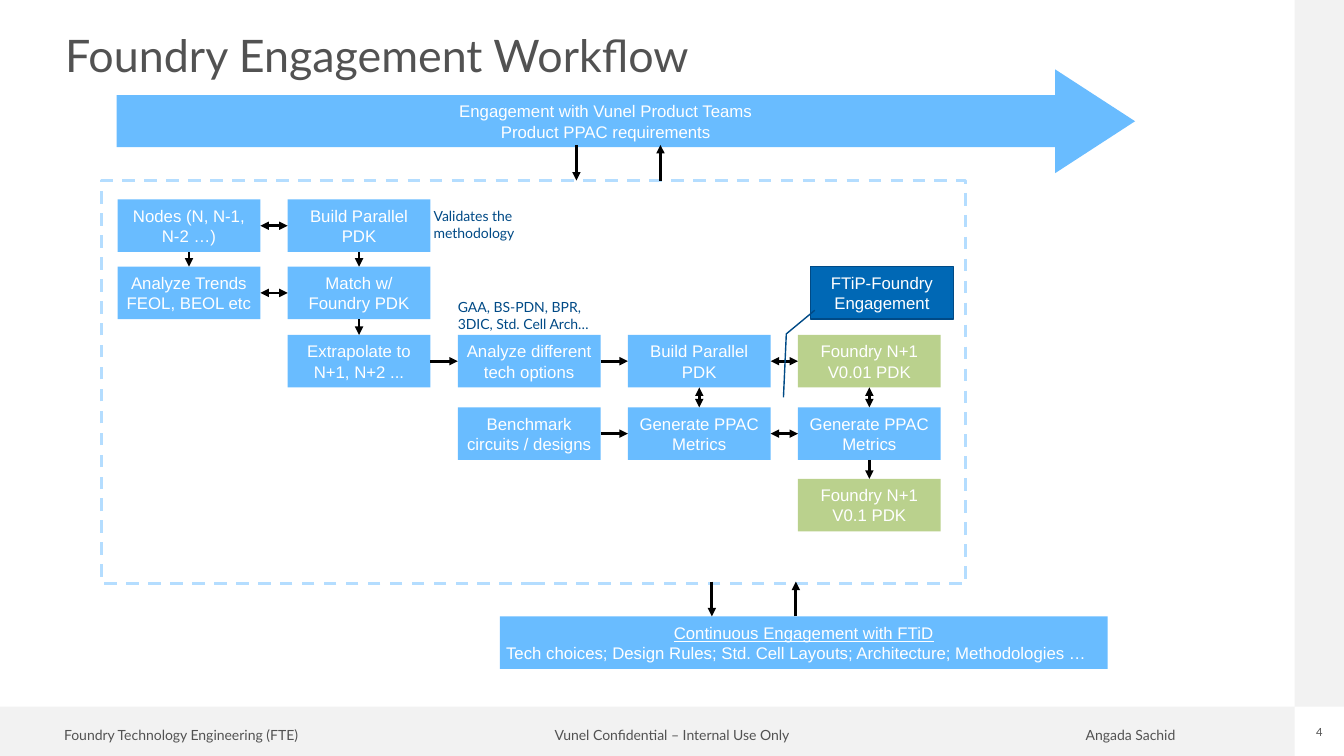
import pptx
import pptx.util
import pptx.dml.color
import pptx.enum.dml
import pptx.enum.shapes
import pptx.enum.text
import pptx.oxml
import pptx.oxml.ns

SCALE = 9525
SHAPE = pptx.enum.shapes.MSO_SHAPE
ALIGN = pptx.enum.text.PP_ALIGN
ANCHOR = pptx.enum.text.MSO_ANCHOR
BLUE, GREEN, GRAY, NAVY, TEXT = "69BCFF", "BAD18D", "F2F2F2", "004A86", "525252"

deck = pptx.Presentation()
deck.slide_width, deck.slide_height = 1280 * SCALE, 720 * SCALE
slide = deck.slides.add_slide(deck.slide_layouts[6])
shapes = slide.shapes


def color(code):
    return pptx.dml.color.RGBColor.from_string(code)


def write(text, at=None, shape=None, kind=None, fill=None, size=12, font="Arial",
          ink="FFFFFF", align=ALIGN.CENTER, anchor=ANCHOR.MIDDLE, inset=(6, 6), lead=None):
    place = [n * SCALE for n in at]
    if kind is None:
        shape = shapes.add_textbox(*place)
    else:
        shape = shapes.add_shape(kind, *place)
        shape.shadow.inherit = False
        shape.line.fill.background()
        if fill:
            shape.fill.solid()
            shape.fill.fore_color.rgb = color(fill)
        else:
            shape.fill.background()
    frame = shape.text_frame
    frame.word_wrap = True
    frame.vertical_anchor = anchor
    frame.margin_left = frame.margin_right = inset[0] * SCALE
    frame.margin_top = frame.margin_bottom = inset[1] * SCALE
    frame.text = text
    for para in frame.paragraphs:
        para.alignment = align
        if lead:
            para.line_spacing = lead
        for run in para.runs:
            run.font.size = pptx.util.Pt(size)
            run.font.name = font
            run.font.color.rgb = color(ink)
    return shape


def arrow(start, end, both=False):
    link = shapes.add_connector(pptx.enum.shapes.MSO_CONNECTOR.STRAIGHT,
                                *[n * SCALE for n in start + end])
    link.line.color.rgb = color("000000")
    link.line.width = pptx.util.Pt(2)
    line = link.line._get_or_add_ln()
    for tag in ("a:headEnd", "a:tailEnd") if both else ("a:tailEnd",):
        tip = pptx.oxml.parse_xml("<%s %s/>" % (tag, pptx.oxml.ns.nsdecls("a")))
        tip.set("type", "triangle")
        line.append(tip)
    link._element.spPr.append(pptx.oxml.parse_xml(
        "<a:effectLst %s/>" % pptx.oxml.ns.nsdecls("a")))
    return link


write("", (0, 673, 1233, 47), kind=SHAPE.RECTANGLE, fill=GRAY)
write("", (1233, 0, 47, 673), kind=SHAPE.RECTANGLE, fill=GRAY)
for text, left, wide, align in [
    ("Foundry Technology Engineering (FTE)", 51, 264, ALIGN.LEFT),
    ("Vunel Confidential – Internal Use Only", 505, 270, ALIGN.CENTER),
    ("Angada Sachid", 1024, 120, ALIGN.LEFT),
]:
    write(text, (left, 689, wide, 24), size=10, font="Lato", ink=TEXT, align=align,
          anchor=ANCHOR.TOP, inset=(10, 5), lead=0.9)
write("4", (1250, 691, 13, 13), size=8, font="Lato", ink=TEXT,
      anchor=ANCHOR.TOP, inset=(0, 0))
write("Foundry Engagement Workflow", (62, 24, 1156, 62), size=32, font="Lato",
      ink=TEXT, align=ALIGN.LEFT, inset=(0, 0), lead=0.9)

frame = write("", (97, 172, 823, 384), kind=SHAPE.RECTANGLE)
frame.line.color.rgb = color("B4DDFF")
frame.line.width = pptx.util.Pt(2.25)
frame.line.dash_style = pptx.enum.dml.MSO_LINE.DASH

WIDE, HIGH = 136, 50
tops = [190, 254, 319, 388, 456]
steps = [
    ("Nodes (N, N-1, N-2 …)", 0, 0, BLUE),
    ("Analyze Trends\nFEOL, BEOL etc", 0, 1, BLUE),
    ("Build Parallel PDK", 1, 0, BLUE),
    ("Match w/ Foundry PDK", 1, 1, BLUE),
    ("Extrapolate to N+1, N+2 ...", 1, 2, BLUE),
    ("Analyze different tech options", 2, 2, BLUE),
    ("Benchmark circuits / designs", 2, 3, BLUE),
    ("Build Parallel PDK", 3, 2, BLUE),
    ("Generate PPAC Metrics", 3, 3, BLUE),
    ("Foundry N+1 V0.01 PDK", 4, 2, GREEN),
    ("Generate PPAC Metrics", 4, 3, BLUE),
    ("Foundry N+1 V0.1 PDK", 4, 4, GREEN),
]
boxes = {}
for text, col, row, fill in steps:
    boxes[col, row] = write(text, (112 + 162 * col, tops[row], WIDE, HIGH),
                            kind=SHAPE.RECTANGLE, fill=fill)

for start, end, both in [
    ((0, 0), (1, 0), True), ((0, 1), (1, 1), True),
    ((0, 0), (0, 1), False), ((1, 0), (1, 1), False), ((1, 1), (1, 2), False),
    ((1, 2), (2, 2), False), ((2, 2), (3, 2), False), ((2, 3), (3, 3), False),
    ((3, 2), (4, 2), True), ((3, 3), (4, 3), True),
    ((3, 2), (3, 3), True), ((4, 2), (4, 3), True), ((4, 3), (4, 4), False),
]:
    link = arrow((0, 0), (0, 0), both)
    across = start[1] == end[1]
    link.begin_connect(boxes[start], 3 if across else 2)
    link.end_connect(boxes[end], 1 if across else 0)

call = write("FTiP-Foundry Engagement", (772, 254, WIDE, HIGH),
             kind=SHAPE.LINE_CALLOUT_2, fill="0068B5")
call.line.color.rgb = color(NAVY)
call.line.width = pptx.util.Pt(1)
for spot, value in enumerate([0.83, 0.03, 1.28, -0.17, 2.49, -0.19]):
    call.adjustments[spot] = value

teams = write("Engagement with Vunel Product Teams\nProduct PPAC requirements",
              (111, 66, 970, 99), kind=SHAPE.RIGHT_ARROW, fill=BLUE)
teams.adjustments[0] = 0.5
teams.adjustments[1] = 0.77

bar = write("Continuous Engagement with FTiD\nTech choices; Design Rules; Std. Cell Layouts; "
            "Architecture; Methodologies …", (476, 587, 579, 50),
            kind=SHAPE.RECTANGLE, fill=BLUE)
head, body = bar.text_frame.paragraphs
head.runs[0].font.underline = True
body.alignment = ALIGN.LEFT

for left, top, low in [(549, 138, 172), (678, 554, 587)]:
    arrow((left, top), (left, low))
    arrow((left + 80, low), (left + 80, top))

for text, left, top in [
    ("Validates the methodology", 413, 198),
    ("GAA, BS-PDN, BPR, 3DIC, Std. Cell Arch…", 436, 284),
]:
    write(text, (left, top, WIDE, 33), size=10, font="Lato", ink=NAVY,
          align=ALIGN.LEFT, anchor=ANCHOR.TOP, inset=(0, 0))

deck.save("out.pptx")
